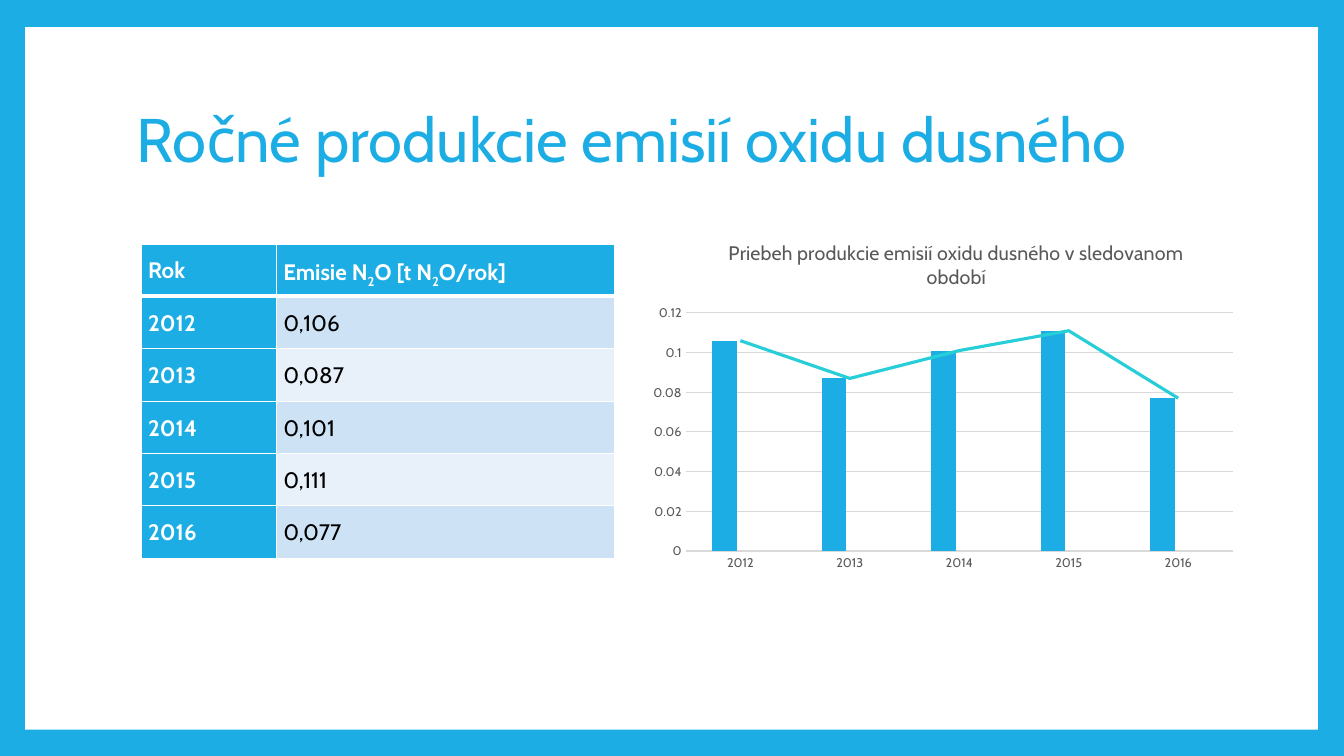
from lxml import etree
from pptx import Presentation
from pptx import util as u
from pptx.chart import data as chart_data
from pptx.dml import color as dml
from pptx.enum import chart as charts, shapes, text
from pptx.oxml import parse_xml
from pptx.oxml import ns

BLUE, WHITE, BLACK, GREY, GRID = "1CADE4", "FFFFFF", "000000", "595959", "D9D9D9"
BANDS = ["CDE3F5", "E8F1FA"]
YEARS = ["2012", "2013", "2014", "2015", "2016"]
EMISSIONS = [0.106, 0.087, 0.101, 0.111, 0.077]


def rgb(value):
    return dml.RGBColor.from_string(value)


def box(*lengths):
    return [u.Inches(length) for length in lengths]


class EmissionSlide:
    font = "Cabin"

    def __init__(self, presentation):
        self.slide = presentation.slides.add_slide(presentation.slide_layouts[5])
        self.paint(self.slide.background.fill, BLUE)

    def paint(self, fill, color):
        fill.solid()
        fill.fore_color.rgb = rgb(color)

    def style(self, font, size, color, bold=False):
        font.name, font.size, font.bold = self.font, u.Pt(size), bold
        font.color.rgb = rgb(color)

    def panel(self, *place):
        shape = self.slide.shapes.add_shape(shapes.MSO_SHAPE.RECTANGLE, *box(*place))
        shape.shadow.inherit = False
        self.paint(shape.fill, WHITE)
        shape.line.fill.background()
        tree = self.slide.shapes.title.element.getparent()
        tree.insert(2, shape.element)

    def title(self, wording, *place):
        shape = self.slide.shapes.title
        shape.left, shape.top, shape.width, shape.height = box(*place)
        frame = shape.text_frame
        frame.text = wording
        frame.vertical_anchor = text.MSO_ANCHOR.MIDDLE
        frame.auto_size = text.MSO_AUTO_SIZE.NONE
        paragraph = frame.paragraphs[0]
        paragraph.alignment = text.PP_ALIGN.LEFT
        paragraph.line_spacing = 0.9
        self.style(paragraph.runs[0].font, 44, BLUE)

    def borders(self, cell, widths):
        properties = cell._tc.get_or_add_tcPr()
        for index, (side, width) in enumerate(widths.items()):
            line = parse_xml(
                f'<a:ln{side} {ns.nsdecls("a")} w="{u.Pt(width)}"><a:solidFill>'
                f'<a:srgbClr val="{WHITE}"/></a:solidFill></a:ln{side}>')
            properties.insert(index, line)

    def cell(self, cell, pieces, fill, color, bold, justified):
        cell.margin_left = cell.margin_right = u.Inches(0.07)
        cell.margin_top = cell.margin_bottom = 0
        self.paint(cell.fill, fill)
        paragraph = cell.text_frame.paragraphs[0]
        paragraph.line_spacing = 1.5
        paragraph.alignment = text.PP_ALIGN.JUSTIFY if justified else text.PP_ALIGN.LEFT
        for index, piece in enumerate(pieces):
            run = paragraph.add_run()
            run.text = piece
            self.style(run.font, 16, color, bold)
            if index % 2:
                run.font._element.set("baseline", "-25000")

    def table(self, header, rows, widths, row_height, left, top):
        count = len(rows) + 1
        table = self.slide.shapes.add_table(
            count, len(widths), *box(left, top, sum(widths), row_height * count)).table
        for column, width in zip(table.columns, widths):
            column.width = u.Inches(width)
        for r, row in enumerate([header] + rows):
            table.rows[r].height = u.Inches(row_height)
            for c, pieces in enumerate(row):
                heading = r == 0 or c == 0
                fill = BLUE if heading else BANDS[(r - 1) % 2]
                cell = table.cell(r, c)
                self.cell(cell, pieces, fill, WHITE if heading else BLACK, heading, heading)
                self.borders(cell, {"L": 1, "R": 1, "T": 3 if r == 1 else 1,
                                    "B": 3 if r == 0 else 1})

    def layout(self, parent, index, inner, **fractions):
        for old in parent.findall(ns.qn("c:layout")):
            parent.remove(old)
        target = '<c:layoutTarget val="inner"/>' if inner else ""
        modes = '<c:xMode val="edge"/><c:yMode val="edge"/>'
        values = "".join(f'<c:{key} val="{value}"/>' for key, value in fractions.items())
        parent.insert(index, parse_xml(
            f'<c:layout {ns.nsdecls("c")}><c:manualLayout>{target}{modes}{values}'
            '</c:manualLayout></c:layout>'))

    def axis(self, axis):
        axis.major_tick_mark = axis.minor_tick_mark = charts.XL_TICK_MARK.NONE
        self.style(axis.tick_labels.font, 9, GREY)

    def move_to_line(self, plot, series):
        bars = plot._element
        lines = parse_xml(
            f'<c:lineChart {ns.nsdecls("c")}><c:grouping val="standard"/>'
            '<c:varyColors val="0"/><c:marker val="1"/></c:lineChart>')
        element = series._element
        for inversion in element.findall(ns.qn("c:invertIfNegative")):
            element.remove(inversion)
        lines.insert(2, element)
        for axis_id in bars.findall(ns.qn("c:axId")):
            etree.SubElement(lines, ns.qn("c:axId")).set("val", axis_id.get("val"))
        bars.addnext(lines)

    def chart(self, heading, *place):
        source = chart_data.CategoryChartData()
        source.categories = YEARS
        for name, values in [("Series 1", EMISSIONS), ("Series 2", [None] * len(YEARS)),
                             ("Series 3", EMISSIONS)]:
            source.add_series(name, values)
        chart = self.slide.shapes.add_chart(
            charts.XL_CHART_TYPE.COLUMN_CLUSTERED, *box(*place), source).chart
        chart.has_legend = False
        self.style(chart.font, 10, BLACK)

        chart.has_title = True
        title = chart.chart_title
        title.text_frame.text = heading
        self.style(title.text_frame.paragraphs[0].runs[0].font, 14, GREY)
        title.include_in_layout = False
        self.layout(title._element, 1, False, x=0.14, y=0.03)
        self.layout(chart._chartSpace.chart.plotArea, 0, True, x=0.075, y=0.25, w=0.905, h=0.675)

        self.axis(chart.category_axis)
        self.axis(chart.value_axis)
        chart.category_axis.format.line.color.rgb = rgb(GRID)
        chart.category_axis.format.line.width = u.Pt(0.75)
        values = chart.value_axis
        values.minimum_scale, values.maximum_scale, values.major_unit = 0, 0.12, 0.02
        values.format.line.fill.background()
        values.major_gridlines.format.line.color.rgb = rgb(GRID)
        values.major_gridlines.format.line.width = u.Pt(0.75)

        columns = chart.plots[0]
        columns.gap_width, columns.overlap, columns.vary_by_categories = 219, -27, False
        for series, color in zip(columns.series, [BLUE, "2683C6"]):
            self.paint(series.format.fill, color)
        self.move_to_line(columns, columns.series[2])
        trend = chart.plots[1].series[0]
        trend.smooth = False
        trend.marker.style = charts.XL_MARKER_STYLE.NONE
        trend.format.line.color.rgb = rgb("27CED7")
        trend.format.line.width = u.Pt(2.25)


def main():
    presentation = Presentation()
    presentation.slide_width, presentation.slide_height = box(13.33, 7.5)
    slide = EmissionSlide(presentation)
    slide.panel(0.25, 0.27, 12.82, 6.97)
    slide.title("Ročné produkcie emisií oxidu dusného", 1.25, 0.67, 10.8, 1.48)
    header = [["Rok"], ["Emisie N", "2", "O [t N", "2", "O/rok]"]]
    rows = [[[year], [f"{value:.3f}".replace(".", ",")]]
            for year, value in zip(YEARS, EMISSIONS)]
    slide.table(header, rows, [1.34, 3.36], 0.52, 1.4, 2.42)
    slide.chart("Priebeh produkcie emisií oxidu dusného v sledovanom období",
                6.35, 2.23, 6, 3.5)
    presentation.save("out.pptx")


if __name__ == "__main__":
    main()
